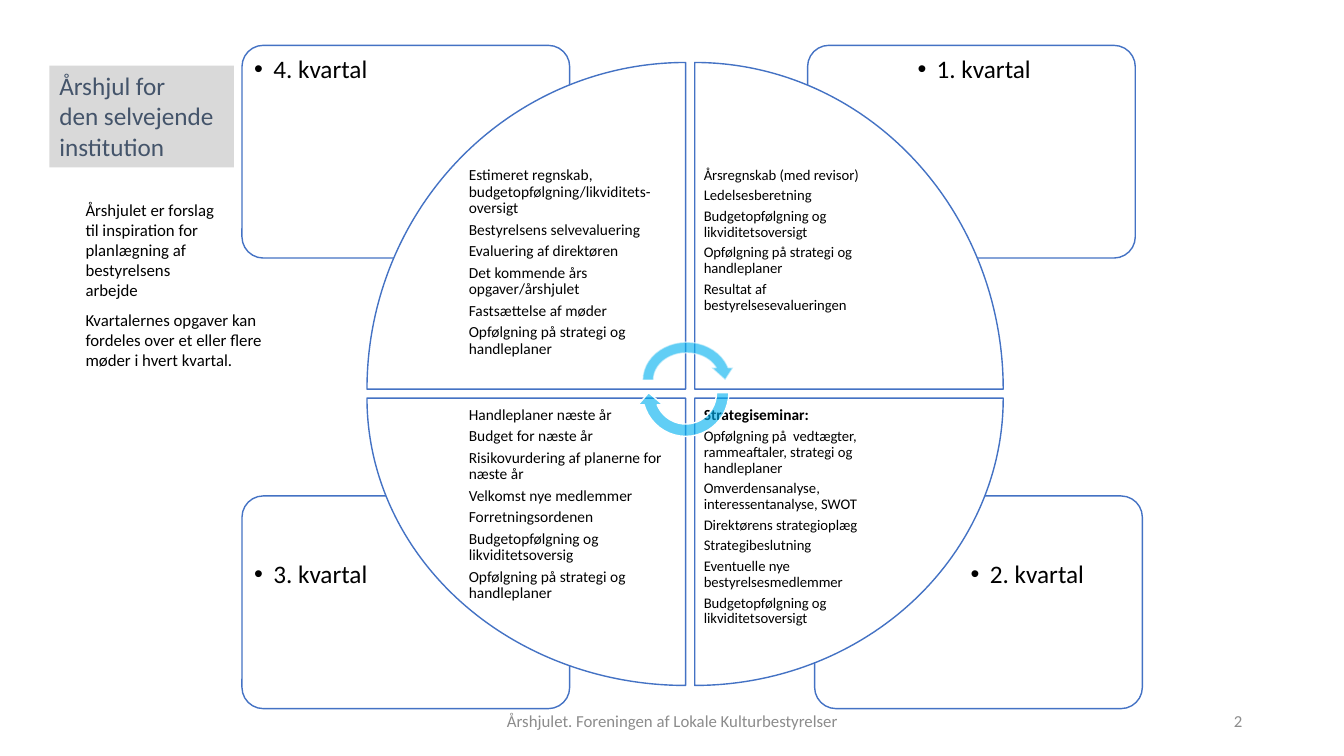
from lxml import etree
from pptx import Presentation
from pptx import util as u
from pptx.dml.color import RGBColor
from pptx.enum import shapes, text
from pptx.oxml import ns

BLACK = RGBColor(0x00, 0x00, 0x00)
WHITE = RGBColor(0xFF, 0xFF, 0xFF)
BLUE = RGBColor(0x44, 0x72, 0xC4)
SKY = RGBColor(0x00, 0xB0, 0xF0)
PALE_GREY = RGBColor(0xD9, 0xD9, 0xD9)
GREY = RGBColor(0x8C, 0x8C, 0x8C)
SLATE = RGBColor(0x44, 0x54, 0x6A)
FONT = "Calibri"
LEFT, CENTER, RIGHT = text.PP_ALIGN.LEFT, text.PP_ALIGN.CENTER, text.PP_ALIGN.RIGHT
TOP, MIDDLE = text.MSO_ANCHOR.TOP, text.MSO_ANCHOR.MIDDLE

CARD_SIZE = (3.25, 2.11)
LABEL_SIZE = (2.18, 1.49)
QUARTERS = [
    ("2. kvartal", (8.08, 4.92), (9.1, 5.5), CENTER),
    ("3. kvartal", (2.4, 4.92), (2.45, 5.5), LEFT),
    ("1. kvartal", (8.01, 0.45), (9.03, 0.49), LEFT),
    ("4. kvartal", (2.4, 0.45), (2.45, 0.49), LEFT),
]

WEDGE_COLUMNS = [(3.64, 3.16), (6.89, 3.06)]
WEDGE_ROWS = [(0.62, 3.24), (3.95, 2.85)]
TASK_COLUMNS = [(4.56, 2.24), (6.89, 2.16)]
TASK_ROWS = [(1.57, 2.29), (3.95, 2.02)]
WEDGES = [
    (0, 0, 11, None, [
        "Estimeret regnskab, budgetopfølgning/likviditets-oversigt",
        "Bestyrelsens selvevaluering",
        "Evaluering af direktøren",
        "Det kommende års opgaver/årshjulet",
        "Fastsættelse af møder",
        "Opfølgning på strategi og handleplaner",
    ]),
    (1, 0, 10.5, None, [
        "Årsregnskab (med revisor)",
        "Ledelsesberetning",
        "Budgetopfølgning og likviditetsoversigt",
        "Opfølgning på strategi og handleplaner",
        "Resultat af bestyrelsesevalueringen",
    ]),
    (1, 1, 10.5, "Strategiseminar:", [
        "Opfølgning på  vedtægter, rammeaftaler, strategi og handleplaner",
        "Omverdensanalyse, interessentanalyse, SWOT",
        "Direktørens strategioplæg",
        "Strategibeslutning",
        "Eventuelle nye bestyrelsesmedlemmer",
        "Budgetopfølgning og likviditetsoversigt",
    ]),
    (0, 1, 11, None, [
        "Handleplaner næste år",
        "Budget for næste år",
        "Risikovurdering af planerne for næste år",
        "Velkomst nye medlemmer",
        "Forretningsordenen",
        "Budgetopfølgning og likviditetsoversig",
        "Opfølgning på strategi og handleplaner",
    ]),
]

ARROWS = [((6.32, 3.34, 0.98, 0.86), 0, 52), ((6.31, 3.4, 0.98, 0.99), 180, 100)]

TITLE_AREA = (0.49, 0.65, 1.83, 1.01)
TITLE = ["Årshjul for", "den selvejende institution"]
NOTES = [
    ((0.75, 3.02, 2.09, 0.71),
     "Kvartalernes opgaver kan fordeles over et eller flere møder i hvert kvartal."),
    ((0.75, 1.93, 1.49, 1.11),
     "Årshjulet er forslag til inspiration for planlægning af bestyrelsens arbejde"),
]
FOOTERS = [
    ((4.42, 6.95, 4.5, 0.4), "Årshjulet. Foreningen af Lokale Kulturbestyrelser", CENTER),
    ((9.42, 6.95, 3, 0.4), "2", RIGHT),
]

deck = Presentation()
deck.slide_width, deck.slide_height = u.Inches(13.33), u.Inches(7.5)
page = deck.slides.add_slide(deck.slide_layouts[6])


def set_alpha(fill_owner, percent):
    for color in fill_owner.iter(ns.qn("a:srgbClr")):
        etree.SubElement(color, ns.qn("a:alpha"), val=str(percent * 1000))


def add_shape(kind, area, fill, line=None, fill_alpha=100, line_alpha=100):
    shape = page.shapes.add_shape(kind, *map(u.Inches, area))
    shape.shadow.inherit = False
    shape.fill.solid()
    shape.fill.fore_color.rgb = fill
    if fill_alpha < 100:
        set_alpha(shape._element.spPr.find(ns.qn("a:solidFill")), fill_alpha)
    if line is None:
        shape.line.fill.background()
    else:
        shape.line.color.rgb = line
        shape.line.width = u.Pt(1)
        if line_alpha < 100:
            set_alpha(shape._element.spPr.find(ns.qn("a:ln")), line_alpha)
    return shape


def add_box(area):
    return page.shapes.add_textbox(*map(u.Inches, area))


def prepare(box, inset=None, anchor=TOP, grow=False):
    frame = box.text_frame
    frame.word_wrap = True
    frame.vertical_anchor = anchor
    frame.auto_size = text.MSO_AUTO_SIZE.SHAPE_TO_FIT_TEXT if grow else text.MSO_AUTO_SIZE.NONE
    if inset is not None:
        frame.margin_left = frame.margin_right = u.Inches(inset)
        frame.margin_top = frame.margin_bottom = u.Inches(inset)


def write(box, lines, color=BLACK, align=LEFT, spacing=None, after=None):
    frame = box.text_frame
    for index, (words, size, bold) in enumerate(lines):
        para = frame.add_paragraph() if index else frame.paragraphs[0]
        para.alignment = align
        if spacing:
            para.line_spacing = spacing
        if after:
            para.space_after = u.Pt(after)
        span = para.add_run()
        span.text = words
        span.font.name = FONT
        span.font.size = u.Pt(size)
        span.font.bold = bold
        span.font.color.rgb = color


def add_bullet(para):
    props = para._p.get_or_add_pPr()
    props.set("marL", str(u.Inches(0.19)))
    props.set("indent", str(u.Inches(-0.19)))
    etree.SubElement(props, ns.qn("a:buFont"), typeface="Arial")
    etree.SubElement(props, ns.qn("a:buChar"), char="•")


for name, card_at, label_at, align in QUARTERS:
    card = add_shape(shapes.MSO_SHAPE.ROUNDED_RECTANGLE, card_at + CARD_SIZE, WHITE, BLUE, 90)
    card.adjustments[0] = 0.1
    label = add_box(label_at + LABEL_SIZE)
    prepare(label, 0.07)
    write(label, [(name, 18, False)], align=align, spacing=0.9)
    add_bullet(label.text_frame.paragraphs[0])

for turn, (column, row, size, heading, tasks) in enumerate(WEDGES):
    (left, width), (top, height) = WEDGE_COLUMNS[column], WEDGE_ROWS[row]
    if turn % 2:
        left, top = left + (width - height) / 2, top + (height - width) / 2
        width, height = height, width
    wedge = add_shape(shapes.MSO_SHAPE.PIE_WEDGE, (left, top, width, height), WHITE, BLUE)
    wedge.rotation = 90 * turn

    (left, width), (top, height) = TASK_COLUMNS[column], TASK_ROWS[row]
    task_box = add_box((left, top, width, height))
    prepare(task_box, 0.09)
    lines = [(heading, 11, True)] if heading else []
    lines += [(task, size, False) for task in tasks]
    write(task_box, lines, spacing=0.9, after=3.4)

for area, rotation, line_alpha in ARROWS:
    arrow = add_shape(shapes.MSO_SHAPE.CIRCULAR_ARROW, area, SKY, WHITE, 62, line_alpha)
    arrow.rotation = rotation

title = add_shape(shapes.MSO_SHAPE.RECTANGLE, TITLE_AREA, PALE_GREY)
prepare(title, grow=True)
write(title, [(line, 18, False) for line in TITLE], SLATE)

for area, words in NOTES:
    note = add_box(area)
    prepare(note, grow=True)
    write(note, [(words, 12, False)])

for area, words, align in FOOTERS:
    footer = add_box(area)
    prepare(footer, anchor=MIDDLE)
    write(footer, [(words, 12, False)], GREY, align)

deck.save("out.pptx")
